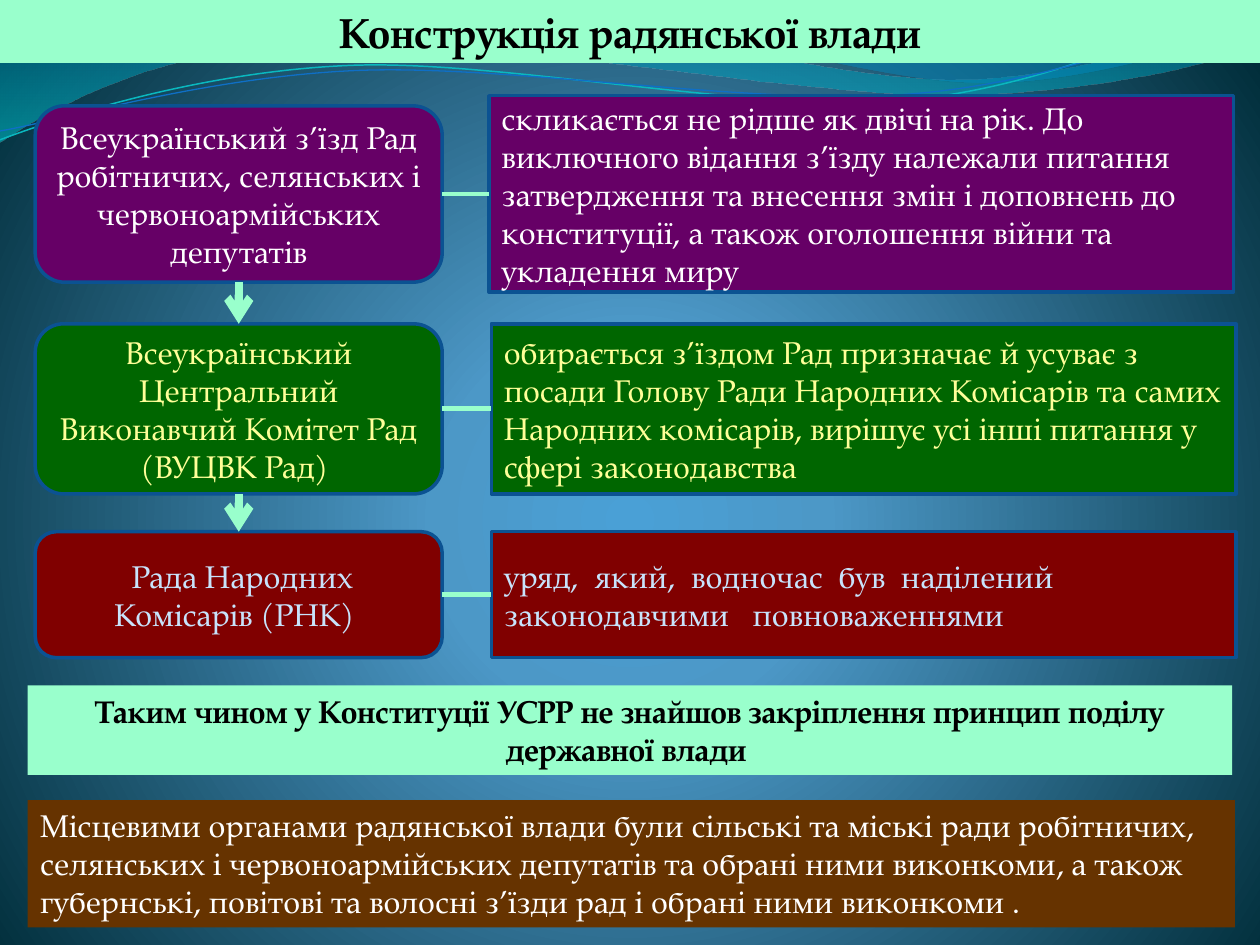
import pptx
import pptx.dml.color
import pptx.enum.shapes
import pptx.enum.text
import pptx.oxml
import pptx.oxml.ns
import pptx.util
from dataclasses import dataclass
from typing import Optional

Inches = pptx.util.Inches
Pt = pptx.util.Pt
ShapeKind = pptx.enum.shapes.MSO_SHAPE
Align = pptx.enum.text.PP_ALIGN
Anchor = pptx.enum.text.MSO_ANCHOR
qn = pptx.oxml.ns.qn
NAMESPACE = pptx.oxml.ns.nsdecls("a")


@dataclass(frozen=True)
class Theme:
    font: str = "TeX Gyre Pagella"
    space_font: str = "Calibri"
    title_size: float = 24
    text_size: float = 18
    mint: str = "99FFCC"
    brown: str = "663300"
    purple: str = "660066"
    green: str = "006600"
    maroon: str = "800000"
    outline: str = "0B5292"
    black: str = "000000"
    white: str = "FFFFFF"
    yellow: str = "FFFF99"
    pale_blue: str = "C8E3FB"
    wave_cyan: str = "0AB8BF"
    wave_blue: str = "0F6FC6"
    # Gradient stops: position, colour, opacity
    backdrop: tuple = ((0, "4AA0D6", 100), (25, "4C98C7", 100), (100, "002C38", 100))
    wide_wave: tuple = ((0, "0074A1", 45), (100, "00C6CF", 55))
    right_wave: tuple = ((0, "00A1A9", 30), (80, "008BBF", 45))


THEME = Theme()


@dataclass(frozen=True)
class Box:
    left: float
    top: float
    width: float
    height: float
    fill: str
    color: str
    text: str
    kind: int = ShapeKind.RECTANGLE
    align: int = Align.LEFT
    anchor: int = Anchor.MIDDLE
    bold: bool = False
    outline: Optional[str] = None


@dataclass(frozen=True)
class Level:
    """One organ of power and the description beside it."""
    top: float
    height: float
    fill: str
    color: str
    name: str
    duty: str
    duty_left: float = 3.9
    duty_margin: float = 0


@dataclass(frozen=True)
class Wave:
    """Each step holds one point (line) or three points (curve)."""
    start: tuple
    steps: tuple
    stops: tuple = ()
    line: Optional[str] = None
    width: float = 0


WAVES = (
    Wave((0, 0), (((4.4, -0.01),), ((4.76, 0.17), (6.64, 0.63), (7.58, 0.63)),
                  ((8.53, 0.63), (9.58, 0.26), (10, 0.09)), ((10.01, 0.36),),
                  ((9.83, 0.44), (8.7, 0.76), (7.46, 0.75)),
                  ((6.22, 0.75), (3.82, 0.28), (2.57, 0.34)),
                  ((1.29, 0.36), (0.46, 0.83), (-0.01, 1.13)), ((0, 0),)), THEME.wide_wave),
    Wave((4.79, -0.01), (((5.09, 0.11), (6.82, 0.62), (7.69, 0.65)),
                         ((8.56, 0.69), (9.61, 0.32), (10, 0.21)),
                         ((10, 0),), ((4.79, -0.01),)), THEME.right_wave),
    Wave((0, 1.11), (((0.48, 0.93), (1.58, 0.57), (2.77, 0.52)),
                     ((3.95, 0.47), (5.93, 0.89), (7.13, 0.8)),
                     ((8.33, 0.71), (9.38, 0.15), (9.98, -0.02))), line=THEME.wave_cyan, width=0.85),
    Wave((0, 1.04), (((0.47, 0.96), (1.64, 0.61), (2.83, 0.56)),
                     ((4.03, 0.51), (5.97, 0.84), (7.17, 0.75)),
                     ((8.36, 0.67), (9.41, 0.21), (10, 0.06))), line=THEME.wave_blue, width=0.75),
)

LEVELS = (
    Level(0.84, 1.4, THEME.purple, THEME.white,
          "Всеукраїнський з’їзд Рад робітничих, селянських і червоноармійських депутатів",
          "скликається не рідше як двічі на рік. До виключного відання з’їзду належали питання "
          "затвердження та внесення змін і доповнень до конституції, а також оголошення війни та "
          "укладення миру", duty_left=3.88, duty_margin=0.08),
    Level(2.57, 1.35, THEME.green, THEME.yellow,
          "Всеукраїнський Центральний Виконавчий Комітет Рад (ВУЦВК Рад) ",
          "обирається з’їздом Рад призначає й усуває з посади Голову Ради Народних Комісарів та "
          "самих Народних комісарів, вирішує усі інші питання у сфері законодавства"),
    Level(4.22, 1, THEME.maroon, THEME.pale_blue, " Рада Народних Комісарів (РНК) ",
          "уряд,  який,  водночас  був  наділений законодавчими   повноваженнями"),
)

NOTES = (
    Box(0.22, 5.44, 9.56, 0.71, THEME.mint, THEME.black,
        "Таким чином у Конституції УСРР не знайшов закріплення принцип поділу державної влади ",
        align=Align.CENTER, bold=True),
    Box(0.22, 6.35, 9.58, 1.01, THEME.brown, THEME.white,
        "Місцевими органами радянської влади були сільські та міські ради робітничих, селянських "
        "і червоноармійських депутатів та обрані ними виконкоми, а також губернські, повітові та "
        "волосні з’їзди рад і обрані ними виконкоми .", anchor=Anchor.TOP),
)


def rgb(value: str):
    return pptx.dml.color.RGBColor.from_string(value)


def set_gradient(element, fill, stops: tuple, direction: str) -> None:
    """Give the fill inside an element a gradient, opacity included."""
    fill.solid()
    solid = element.find(".//" + qn("a:solidFill"))
    stop_xml = "".join(
        f'<a:gs pos="{position * 1000}"><a:srgbClr val="{color}">'
        f'<a:alpha val="{opacity * 1000}"/></a:srgbClr></a:gs>' for position, color, opacity in stops)
    solid.getparent().replace(solid, pptx.oxml.parse_xml(
        f'<a:gradFill {NAMESPACE} rotWithShape="1"><a:gsLst>{stop_xml}</a:gsLst>{direction}</a:gradFill>'))


def draw_wave(slide, wave: Wave) -> None:
    ends = [step[-1] for step in wave.steps]
    corners = [(Inches(x), Inches(y)) for x, y in ends]
    builder = slide.shapes.build_freeform(Inches(wave.start[0]), Inches(wave.start[1]))
    builder.add_line_segments(corners, close=bool(wave.stops))
    shape = builder.convert_to_shape()
    # Bend the segments that have control points
    for segment, step in zip(shape.element.findall(".//" + qn("a:lnTo")), wave.steps):
        if len(step) == 3:
            points = "".join(f'<a:pt x="{Inches(x) - shape.left}" y="{Inches(y) - shape.top}"/>'
                             for x, y in step)
            segment.getparent().replace(segment, pptx.oxml.parse_xml(
                f"<a:cubicBezTo {NAMESPACE}>{points}</a:cubicBezTo>"))
    shape.shadow.inherit = False
    if wave.stops:
        set_gradient(shape.element, shape.fill, wave.stops, '<a:lin ang="5400000" scaled="1"/>')
        shape.line.fill.background()
    else:
        shape.fill.background()
        shape.line.color.rgb = rgb(wave.line)
        shape.line.width = Pt(wave.width)


def fill_box(shape, box: Box, size: float = THEME.text_size) -> None:
    """Place, colour and letter a shape or placeholder."""
    shape.left, shape.top = Inches(box.left), Inches(box.top)
    shape.width, shape.height = Inches(box.width), Inches(box.height)
    shape.fill.solid()
    shape.fill.fore_color.rgb = rgb(box.fill)
    if box.outline:
        shape.line.color.rgb = rgb(box.outline)
        shape.line.width = Pt(2)
    else:
        shape.line.fill.background()
    frame = shape.text_frame
    frame.word_wrap = True
    frame.auto_size = pptx.enum.text.MSO_AUTO_SIZE.NONE
    frame.vertical_anchor = box.anchor
    paragraph = frame.paragraphs[0]
    paragraph.alignment = box.align
    body = box.text.lstrip()
    lead = box.text[:len(box.text) - len(body)]
    for text, font in ((lead, THEME.space_font), (body, THEME.font)):
        if text:
            run = paragraph.add_run()
            run.text = text
            run.font.name, run.font.size, run.font.bold = font, Pt(size), box.bold
            run.font.color.rgb = rgb(box.color)


def draw_box(slide, box: Box):
    shape = slide.shapes.add_shape(box.kind, 0, 0, 0, 0)
    shape.shadow.inherit = False
    fill_box(shape, box)
    return shape


def connect(slide, first, first_site: int, second, second_site: int, width: float, arrow: bool) -> None:
    connector = slide.shapes.add_connector(pptx.enum.shapes.MSO_CONNECTOR.STRAIGHT, 0, 0, 0, 0)
    connector.begin_connect(first, first_site)
    connector.end_connect(second, second_site)
    connector.line.color.rgb = rgb(THEME.mint)
    connector.line.width = Pt(width)
    if arrow:
        connector.element.find(".//" + qn("a:ln")).append(
            pptx.oxml.parse_xml(f'<a:tailEnd {NAMESPACE} type="arrow"/>'))
    connector.element.spPr.append(pptx.oxml.parse_xml(f"<a:effectLst {NAMESPACE}/>"))


def main() -> None:
    presentation = pptx.Presentation()
    presentation.slide_width, presentation.slide_height = Inches(10), Inches(7.5)
    slide = presentation.slides.add_slide(presentation.slide_layouts[5])

    # Background and waves
    set_gradient(slide.element, slide.background.fill, THEME.backdrop,
                 '<a:path path="circle"><a:fillToRect l="10000" t="110000" r="10000" b="100000"/></a:path>')
    for wave in WAVES:
        draw_wave(slide, wave)

    # Title band, raised above the waves
    title = slide.shapes.title
    title.element.getparent().append(title.element)
    fill_box(title, Box(0, 0, 10, 0.5, THEME.mint, THEME.black, "Конструкція радянської влади",
                        align=Align.CENTER, anchor=Anchor.TOP, bold=True), THEME.title_size)

    # Conclusions
    for note in NOTES:
        draw_box(slide, note)

    # Levels of power, joined across and downwards
    above = None
    for level in LEVELS:
        duty = draw_box(slide, Box(level.duty_left, level.top - level.duty_margin, 5.91,
                                   level.height + 2 * level.duty_margin, level.fill, level.color,
                                   level.duty, outline=THEME.outline))
        organ = draw_box(slide, Box(0.28, level.top, 3.23, level.height, level.fill, level.color,
                                    level.name, ShapeKind.ROUNDED_RECTANGLE, Align.CENTER,
                                    outline=THEME.outline))
        connect(slide, organ, 3, duty, 1, 2.75, arrow=False)
        if above is not None:
            connect(slide, above, 2, organ, 0, 4.75, arrow=True)
        above = organ

    presentation.save("out.pptx")


if __name__ == "__main__":
    main()
